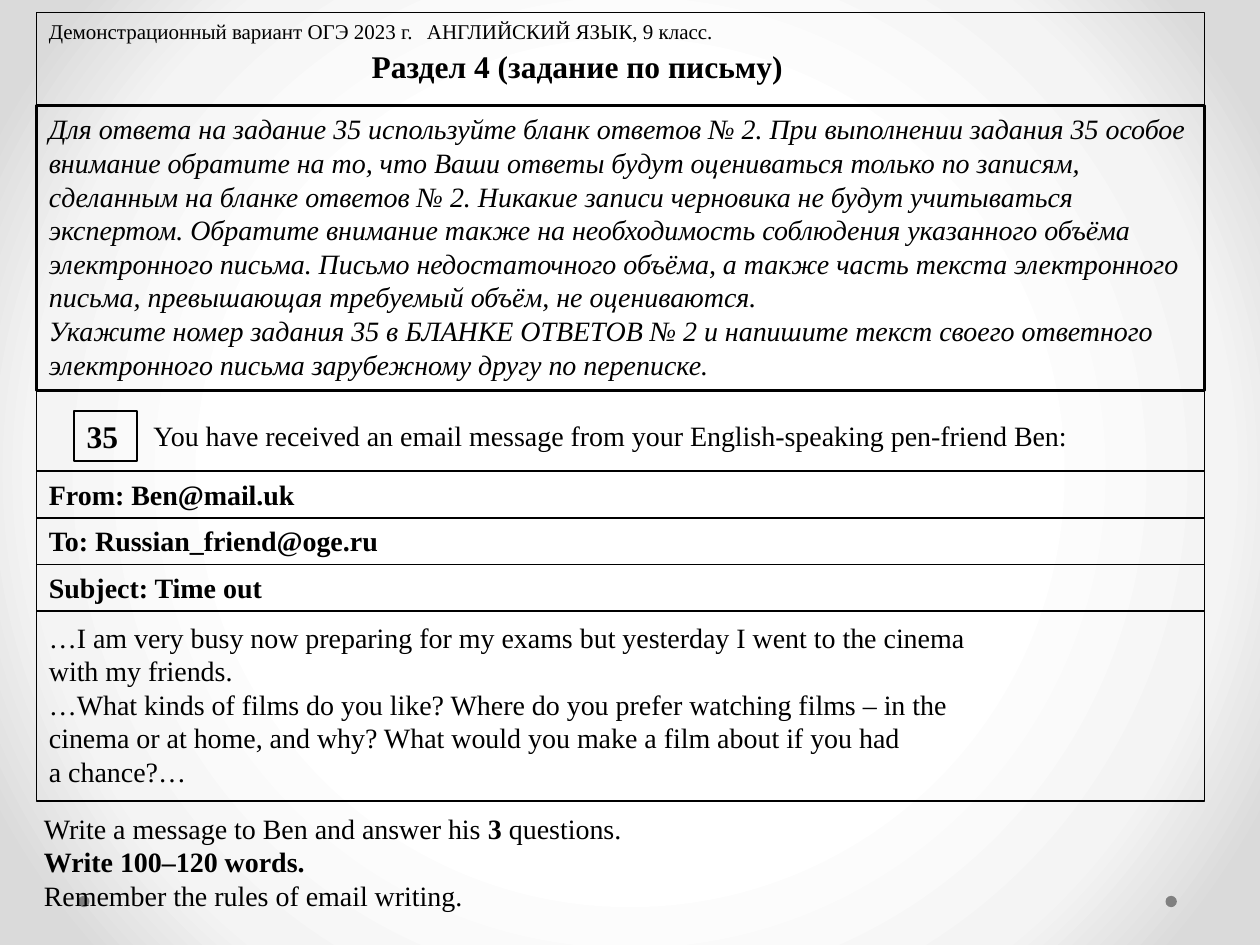
import pptx
import pptx.dml.color
import pptx.enum.shapes
import pptx.enum.text
import pptx.oxml
import pptx.oxml.ns
import pptx.util
from pptx.util import Inches

BLACK = pptx.dml.color.RGBColor(0, 0, 0)
GRAY = pptx.dml.color.RGBColor(0x80, 0x80, 0x80)
FONT = "Times New Roman"
LEFT, WIDTH = Inches(0.29), Inches(9.27)
NS = pptx.oxml.ns.nsdecls("a", "p")
STOPS = [(50, "FFFFFF"), (76, "F4F4F4"), (92, "DADADA")]

INSTRUCTIONS = [
    "Для ответа на задание 35 используйте бланк ответов № 2. При выполнении задания 35 "
    "особое внимание обратите на то, что Ваши ответы будут оцениваться только по записям, "
    "сделанным на бланке ответов № 2. Никакие записи черновика не будут учитываться "
    "экспертом. Обратите внимание также на необходимость соблюдения указанного объёма "
    "электронного письма. Письмо недостаточного объёма, а также часть текста электронного "
    "письма, превышающая требуемый объём, не оцениваются.",
    "Укажите номер задания 35 в БЛАНКЕ ОТВЕТОВ № 2 и напишите текст своего ответного "
    "электронного письма зарубежному другу по переписке.",
]
LETTER = [
    "…I am very busy now preparing for my exams but yesterday I went to the cinema",
    "with my friends.",
    "…What kinds of films do you like? Where do you prefer watching films – in the",
    "cinema or at home, and why? What would you make a film about if you had",
    "a chance?…",
]
MAIL_FIELDS = ["From: Ben@mail.uk", "To: Russian_friend@oge.ru", "Subject: Time out"]


def add_run(p, text, size=16, bold=False, italic=False):
    r = p.add_run()
    r.text = text
    r.font.name, r.font.size = FONT, pptx.util.Pt(size)
    r.font.bold, r.font.italic = bold, italic
    r.font.color.rgb = BLACK


def add_text(tf, text, before=0, indent=0, tab=None, **fmt):
    """Fill the first paragraph of tf, or append one, with text in one format."""
    p = tf.paragraphs[0]
    if p.runs:
        p = tf.add_paragraph()
    p.alignment = pptx.enum.text.PP_ALIGN.LEFT
    p.space_before = pptx.util.Pt(before)
    p_pr = p._p.get_or_add_pPr()
    p_pr.set("marL", str(indent))
    p_pr.set("indent", "0")
    if tab:
        p_pr.append(pptx.oxml.parse_xml(
            f'<a:tabLst {NS}><a:tab pos="{tab}" algn="l"/></a:tabLst>'))
    if text:
        add_run(p, text, **fmt)
    return p


def set_background(s):
    stops = "".join(f'<a:gs pos="{pos * 1000}"><a:srgbClr val="{color}"/></a:gs>'
                    for pos, color in STOPS)
    s._element.cSld.insert(0, pptx.oxml.parse_xml(
        f'<p:bg {NS}><p:bgPr><a:gradFill rotWithShape="1"><a:gsLst>{stops}</a:gsLst>'
        '<a:path path="circle"><a:fillToRect l="50000" t="50000" r="50000" b="50000"/>'
        '</a:path></a:gradFill><a:effectLst/></p:bgPr></p:bg>'))


def add_box(s, x, y, w, h, line=1):
    """Add an outlined box without fill and return its text frame."""
    sp = s.shapes.add_shape(pptx.enum.shapes.MSO_SHAPE.RECTANGLE, x, y, w, h)
    sp.shadow.inherit = False
    sp.fill.background()
    sp.line.color.rgb = BLACK
    sp.line.width = pptx.util.Pt(line)
    tf = sp.text_frame
    tf.word_wrap = True
    tf.vertical_anchor = pptx.enum.text.MSO_ANCHOR.TOP
    return tf


def add_dots(s, x, y, w, size):
    for left in (x, x + w - size):
        sp = s.shapes.add_shape(pptx.enum.shapes.MSO_SHAPE.OVAL, left, y, size, size)
        sp.shadow.inherit = False
        sp.fill.solid()
        sp.fill.fore_color.rgb = GRAY
        sp.line.fill.background()


def add_page(s, x, y, w, h):
    """Add the frame with its title, header line, task line and letter."""
    tf = add_box(s, x, y, w, h)
    add_text(tf, "Демонстрационный вариант ОГЭ 2023 г.\tАНГЛИЙСКИЙ ЯЗЫК, 9 класс.",
             size=12, tab=Inches(6.25))
    add_text(tf, "You have received an email message from your English-speaking "
                 "pen-friend Ben:", before=214, indent=Inches(0.83))
    for i, line in enumerate(LETTER):
        add_text(tf, line, before=0 if i else 96)

    title = s.shapes.title
    title.left, title.top = x + Inches(2.56), y + Inches(0.2)
    title.width, title.height = Inches(3.6), Inches(0.44)
    title.text_frame.vertical_anchor = pptx.enum.text.MSO_ANCHOR.MIDDLE
    add_text(title.text_frame, "Раздел 4 (задание по письму)", size=18, bold=True)


def add_instructions(s, x, y, w, h):
    tf = add_box(s, x, y, w, h, line=1.5)
    for text in INSTRUCTIONS:
        add_text(tf, text, italic=True)


def add_mail_fields(s, x, y, w, row_h):
    for i, text in enumerate(MAIL_FIELDS):
        add_text(add_box(s, x, y + i * row_h, w, row_h), text, bold=True)


def add_requirements(s, x, y, w, h):
    tf = s.shapes.add_textbox(x, y, w, h).text_frame
    tf.word_wrap = False
    indent = Inches(0.05)
    p = add_text(tf, "Write a message to Ben and answer his ", indent=indent)
    add_run(p, "3", bold=True)
    add_run(p, " questions.")
    add_text(tf, "Write 100–120 words.", indent=indent, bold=True)
    add_text(tf, "Remember the rules of email writing.", indent=indent)


def main():
    prs = pptx.Presentation()
    prs.slide_width, prs.slide_height = Inches(10), Inches(7.5)
    s = prs.slides.add_slide(prs.slide_layouts[5])
    set_background(s)
    add_dots(s, Inches(0.62), Inches(7.11), Inches(8.72), Inches(0.09))
    add_page(s, LEFT, Inches(0.1), WIDTH, Inches(6.26))
    add_instructions(s, LEFT, Inches(0.84), WIDTH, Inches(2.26))
    number = add_box(s, Inches(0.59), Inches(3.26), Inches(0.5), Inches(0.4))
    add_text(number, "35", size=18, bold=True)
    add_mail_fields(s, LEFT, Inches(3.74), WIDTH, Inches(0.37))
    add_requirements(s, Inches(0.2), Inches(6.39), Inches(4.92), Inches(0.94))
    prs.save("out.pptx")


if __name__ == "__main__":
    main()
